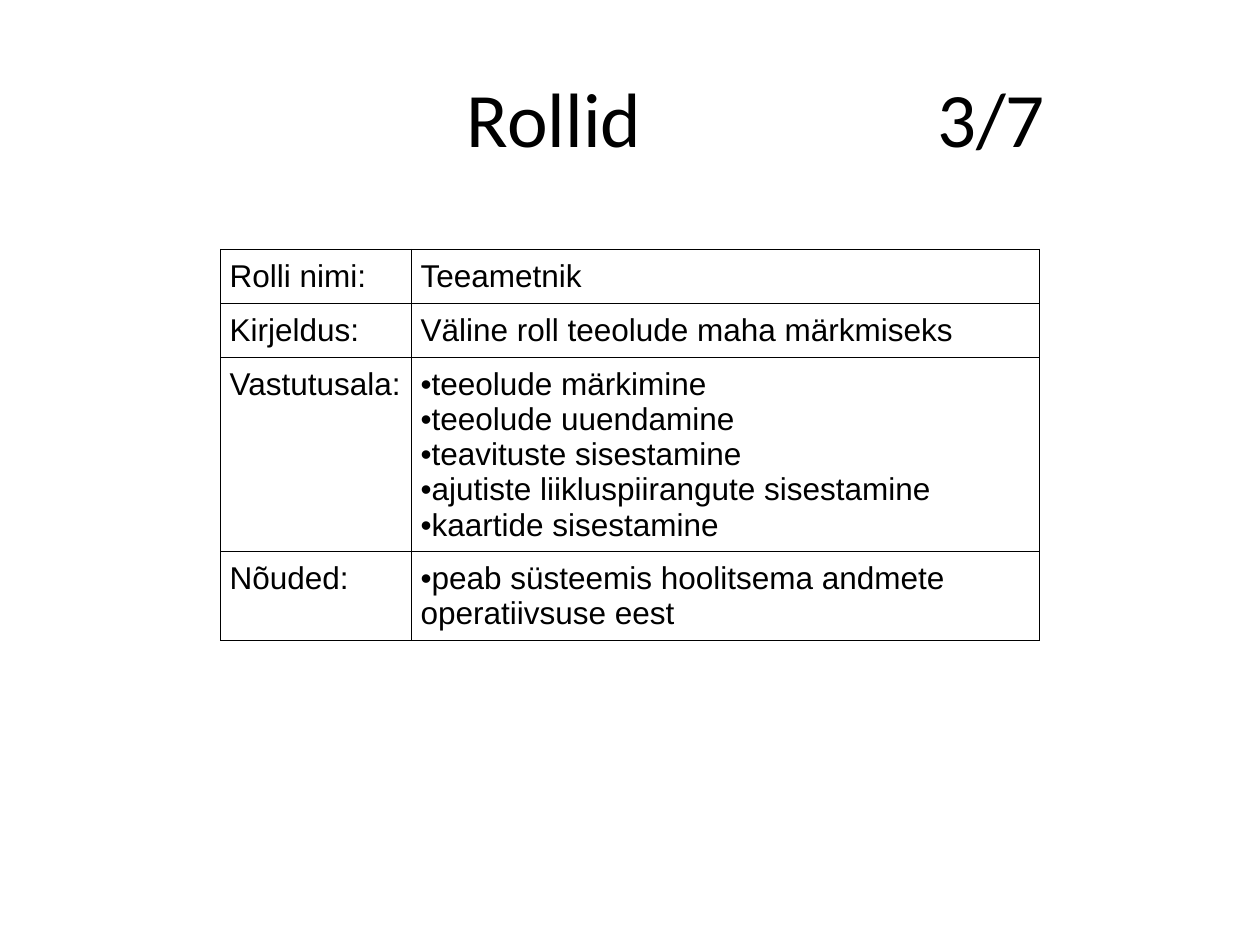
"""Build the slide that describes the road officer role."""
from lxml import etree
from pptx import Presentation
from pptx.dml.color import RGBColor
from pptx.enum import text
from pptx.oxml import ns
from pptx.util import Cm, Pt

THEME = {
    "ink": RGBColor(0, 0, 0),
    "paper": RGBColor(255, 255, 255),
    "head": {"name": "Calibri", "size": Pt(44), "bold": False},
    "cell": {"name": "Arial", "size": Pt(18), "bold": False},
    "line": Pt(0.75),
}
ROWS = [
    (1.09, "Rolli nimi:", ["Teeametnik"], False),
    (1.09, "Kirjeldus:", ["Väline roll teeolude maha märkmiseks"], False),
    (3.91, "Vastutusala:", [
        "teeolude märkimine",
        "teeolude uuendamine",
        "teavituste sisestamine",
        "ajutiste liikluspiirangute sisestamine",
        "kaartide sisestamine",
    ], True),
    (1.79, "Nõuded:", ["peab süsteemis hoolitsema andmete operatiivsuse eest"], True),
]
COLS = [3.85, 12.66]
TABS = [7.89, 17.37]


def add(node, tag, **vals):
    kid = etree.SubElement(node, ns.qn(tag))
    for key, val in vals.items():
        kid.set(key, str(val))
    return kid


def style(para, form):
    for run in para.runs:
        for key, val in form.items():
            setattr(run.font, key, val)
        run.font.color.rgb = THEME["ink"]


deck = Presentation()
deck.slide_width, deck.slide_height = Cm(25.4), Cm(19.05)
slide = deck.slides.add_slide(deck.slide_layouts[5])
slide.background.fill.solid()
slide.background.fill.fore_color.rgb = THEME["paper"]

title = slide.shapes.title
place = {"left": Cm(1.27), "top": Cm(0.76), "width": Cm(22.86), "height": Cm(3.18)}
for key, val in place.items():
    setattr(title, key, val)
frame = title.text_frame
frame.text = "\tRollid\t3/7"
frame.vertical_anchor = text.MSO_ANCHOR.MIDDLE
para = frame.paragraphs[0]
para.alignment = text.PP_ALIGN.LEFT
stops = add(para._p.get_or_add_pPr(), "a:tabLst")
for stop in TABS:
    add(stops, "a:tab", pos=Cm(stop), algn="l")
style(para, THEME["head"])

high = sum(row[0] for row in ROWS)
grid = slide.shapes.add_table(
    len(ROWS), len(COLS), Cm(4.45), Cm(5.03), Cm(sum(COLS)), Cm(high)
).table
grid.first_row = grid.horz_banding = False
for col, wide in zip(grid.columns, COLS):
    col.width = Cm(wide)

for row, (tall, label, items, listed) in zip(grid.rows, ROWS):
    row.height = Cm(tall)
    for cell, lines, marked in zip(row.cells, ([label], items), (False, listed)):
        cell.text = "\n".join(lines)
        for side in ("left", "right", "top", "bottom"):
            setattr(cell, f"margin_{side}", Cm(0.18))
        for para in cell.text_frame.paragraphs:
            if marked:
                form = para._p.get_or_add_pPr()
                add(form, "a:buFont", typeface=THEME["cell"]["name"])
                add(form, "a:buChar", char="•")
            style(para, THEME["cell"])
        props = cell._tc.get_or_add_tcPr()
        for edge in "LRTB":
            line = add(props, f"a:ln{edge}", w=THEME["line"])
            add(add(line, "a:solidFill"), "a:srgbClr", val=THEME["ink"])
        cell.fill.background()

deck.save("out.pptx")
